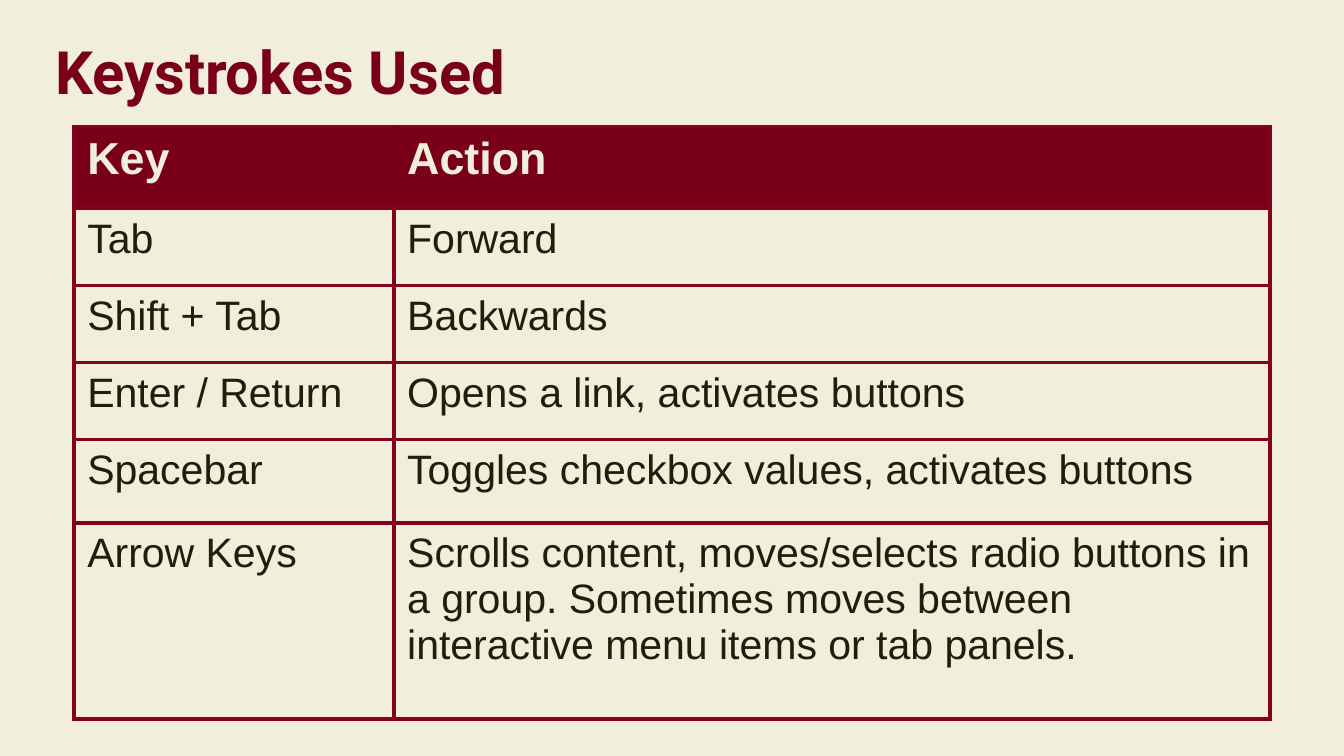
from lxml.etree import SubElement
from pptx import Presentation
from pptx.dml.color import RGBColor
from pptx.enum.text import MSO_ANCHOR, PP_ALIGN
from pptx.oxml.ns import qn
from pptx.util import Inches, Pt

MAROON = RGBColor(0x7A, 0x00, 0x19)
BORDER = RGBColor(0x85, 0x00, 0x1C)
CREAM = RGBColor(0xF2, 0xEE, 0xDC)
INK = RGBColor(0x22, 0x1E, 0x0D)

ROWS = [
    ("Key", "Action"),
    ("Tab", "Forward"),
    ("Shift + Tab", "Backwards"),
    ("Enter / Return", "Opens a link, activates buttons"),
    ("Spacebar", "Toggles checkbox values, activates buttons"),
    ("Arrow Keys", "Scrolls content, moves/selects radio buttons in a group. "
                   "Sometimes moves between interactive menu items or tab panels."),
]
COLUMN_WIDTHS = [2.38, 6.52]
# Three equal rows share 1.72 inches
ROW_HEIGHTS = [0.61] + [1.72 / 3] * 3 + [0.62, 1.46]


def add_border(cell, side, color):
    line = SubElement(cell._tc.get_or_add_tcPr(), qn(f"a:ln{side}"), w=str(Pt(2.25)))
    fill = SubElement(line, qn("a:solidFill"))
    SubElement(fill, qn("a:srgbClr"), val=str(color))


def format_text(text_frame, size, color, bold, font_name):
    for run in text_frame.paragraphs[0].runs:
        run.font.name = font_name
        run.font.size = Pt(size)
        run.font.bold = bold
        run.font.color.rgb = color


# Widescreen slide and background
presentation = Presentation()
presentation.slide_width = Inches(10)
presentation.slide_height = Inches(10 * 9 / 16)
slide = presentation.slides.add_slide(presentation.slide_layouts[5])
slide.background.fill.solid()
slide.background.fill.fore_color.rgb = CREAM

# Title
title = slide.shapes.title
title.left, title.top = Inches(0.31), Inches(0.16)
title.width, title.height = Inches(7.52), Inches(1.08)
text_frame = title.text_frame
text_frame.text = "Keystrokes Used"
text_frame.word_wrap = True
text_frame.vertical_anchor = MSO_ANCHOR.TOP
text_frame.margin_left = text_frame.margin_right = Inches(0.1)
text_frame.margin_top = text_frame.margin_bottom = Inches(0.1)
text_frame.paragraphs[0].alignment = PP_ALIGN.LEFT
format_text(text_frame, 32, MAROON, True, "Roboto")

# Keystroke table
table = slide.shapes.add_table(
    len(ROWS), len(COLUMN_WIDTHS), Inches(0.55), Inches(0.94),
    Inches(sum(COLUMN_WIDTHS)), Inches(sum(ROW_HEIGHTS))).table
table.horz_banding = False
for column, width in zip(table.columns, COLUMN_WIDTHS):
    column.width = Inches(width)
for row, height in zip(table.rows, ROW_HEIGHTS):
    row.height = Inches(height)

for row_index, texts in enumerate(ROWS):
    is_header = row_index == 0
    for column_index, text in enumerate(texts):
        cell = table.cell(row_index, column_index)
        cell.text = text
        cell.margin_left = cell.margin_right = Inches(0.1)
        cell.margin_top = cell.margin_bottom = Inches(0.06)
        cell.vertical_anchor = MSO_ANCHOR.TOP
        # The divider inside the header blends into its fill
        inner_side = "R" if column_index == 0 else "L"
        for side in "LRTB":
            blends = is_header and side == inner_side
            add_border(cell, side, MAROON if blends else BORDER)
        cell.fill.solid()
        cell.fill.fore_color.rgb = MAROON if is_header else CREAM
        format_text(cell.text_frame, 24 if is_header else 22,
                    CREAM if is_header else INK, is_header, "Arial")

presentation.save("out.pptx")
